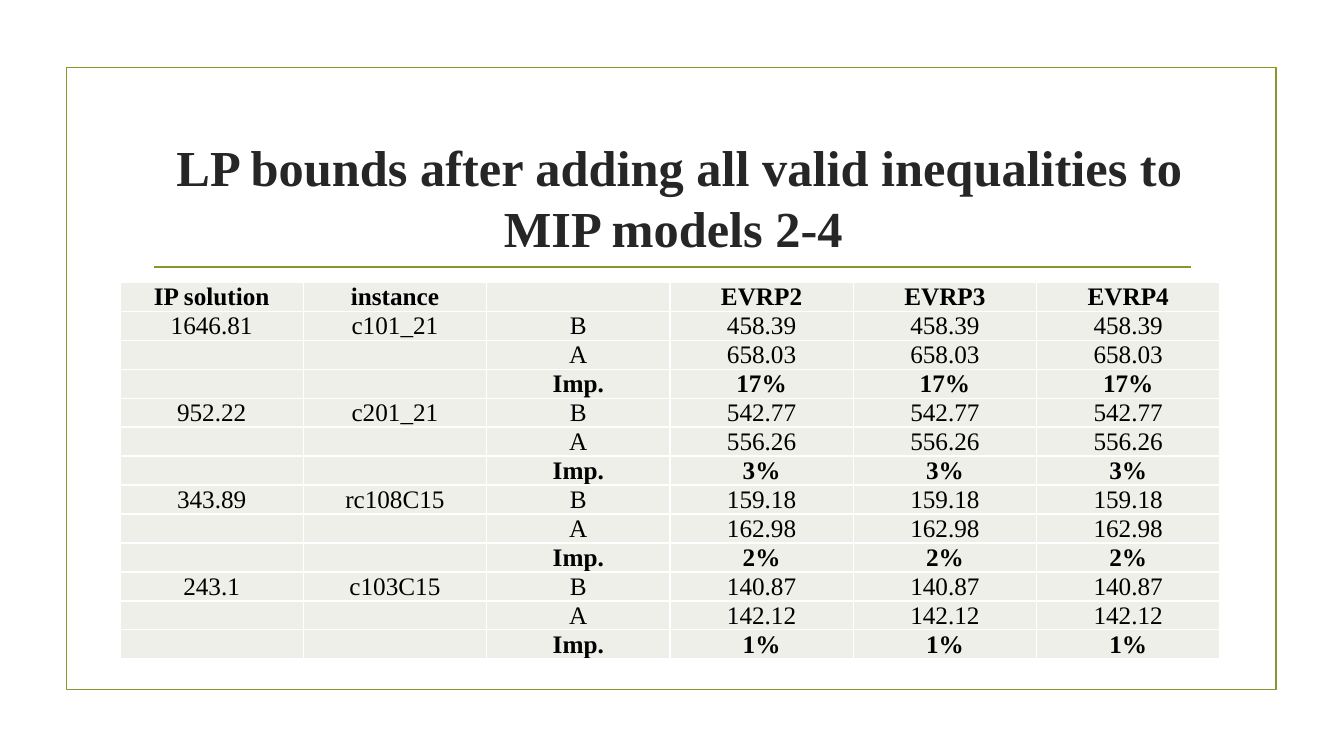
"""Build a slide comparing LP bounds before and after adding valid inequalities."""
import dataclasses

import lxml.etree
import pptx
import pptx.dml.color
import pptx.enum.shapes
import pptx.enum.text
import pptx.oxml.ns
import pptx.util

Inches = pptx.util.Inches
Pt = pptx.util.Pt
Color = pptx.dml.color.RGBColor.from_string
qn = pptx.oxml.ns.qn


@dataclasses.dataclass(frozen=True)
class Theme:
    font: str = "Times New Roman"
    accent: str = "83992A"
    title: str = "262626"
    text: str = "000000"
    cell: str = "EDEFE8"
    border: str = "FFFFFF"
    title_size: int = 36
    table_size: int = 18
    empty_size: int = 10
    line_width: float = 1.25
    border_width: float = 1


theme = Theme()


def style_paragraph(para, size, color, bold):
    para.alignment = pptx.enum.text.PP_ALIGN.CENTER
    para.font.name = theme.font
    para.font.size = Pt(size)
    para.font.bold = bold
    para.font.color.rgb = Color(color)


def add_borders(cell):
    properties = cell._tc.get_or_add_tcPr()
    for position, side in enumerate(("lnL", "lnR", "lnT", "lnB")):
        line = lxml.etree.Element(qn(f"a:{side}"), w=str(Pt(theme.border_width)))
        fill = lxml.etree.SubElement(line, qn("a:solidFill"))
        lxml.etree.SubElement(fill, qn("a:srgbClr"), val=theme.border)
        properties.insert(position, line)


deck = pptx.Presentation()
deck.slide_width = Inches(13.33)
deck.slide_height = Inches(7.5)
page = deck.slides.add_slide(deck.slide_layouts[5])

frame = page.shapes.add_shape(
    pptx.enum.shapes.MSO_SHAPE.RECTANGLE, Inches(0.66), Inches(0.67), Inches(12), Inches(6.17))
frame.shadow.inherit = False
frame.fill.background()

rule = page.shapes.add_connector(
    pptx.enum.shapes.MSO_CONNECTOR.STRAIGHT, Inches(1.53), Inches(2.65), Inches(11.81), Inches(2.65))
lxml.etree.SubElement(rule._element.spPr, qn("a:effectLst"))

for outlined in (frame, rule):
    outlined.line.color.rgb = Color(theme.accent)
    outlined.line.width = Pt(theme.line_width)

title = page.shapes.title
title.left, title.top = Inches(1.49), Inches(1.24)
title.width, title.height = Inches(10.5), Inches(1.43)
title.text_frame.text = "LP bounds after adding all valid inequalities to MIP models 2-4 "
title.text_frame.word_wrap = True
title.text_frame.auto_size = pptx.enum.text.MSO_AUTO_SIZE.NONE
title.text_frame.vertical_anchor = pptx.enum.text.MSO_ANCHOR.MIDDLE
style_paragraph(title.text_frame.paragraphs[0], theme.title_size, theme.title, True)

models = ["EVRP2", "EVRP3", "EVRP4"]
instances = [
    ("1646.81", "c101_21", "458.39", "658.03", "17%"),
    ("952.22", "c201_21", "542.77", "556.26", "3%"),
    ("343.89", "rc108C15", "159.18", "162.98", "2%"),
    ("243.1", "c103C15", "140.87", "142.12", "1%"),
]
rows = [["IP solution", "instance", ""] + models]
for solution, instance, before, after, improvement in instances:
    rows.append([solution, instance, "B"] + [before] * len(models))
    rows.append(["", "", "A"] + [after] * len(models))
    rows.append(["", "", "Imp."] + [improvement] * len(models))

bounds = page.shapes.add_table(
    len(rows), len(rows[0]), Inches(1.19), Inches(2.8), Inches(10.91), Inches(3.74)).table
bounds.first_row = False
bounds.horz_banding = False
for row_index, values in enumerate(rows):
    bold = row_index % 3 == 0
    for column_index, value in enumerate(values):
        cell = bounds.cell(row_index, column_index)
        cell.fill.solid()
        cell.fill.fore_color.rgb = Color(theme.cell)
        cell.margin_left = cell.margin_right = cell.margin_top = Inches(0.01)
        cell.margin_bottom = 0
        cell.vertical_anchor = pptx.enum.text.MSO_ANCHOR.BOTTOM
        add_borders(cell)
        if value:
            cell.text = value
            style_paragraph(cell.text_frame.paragraphs[0], theme.table_size, theme.text, bold)
        else:
            para = cell.text_frame.paragraphs[0]
            lxml.etree.SubElement(para._p, qn("a:endParaRPr"), sz=str(theme.empty_size * 100))

deck.save("out.pptx")
